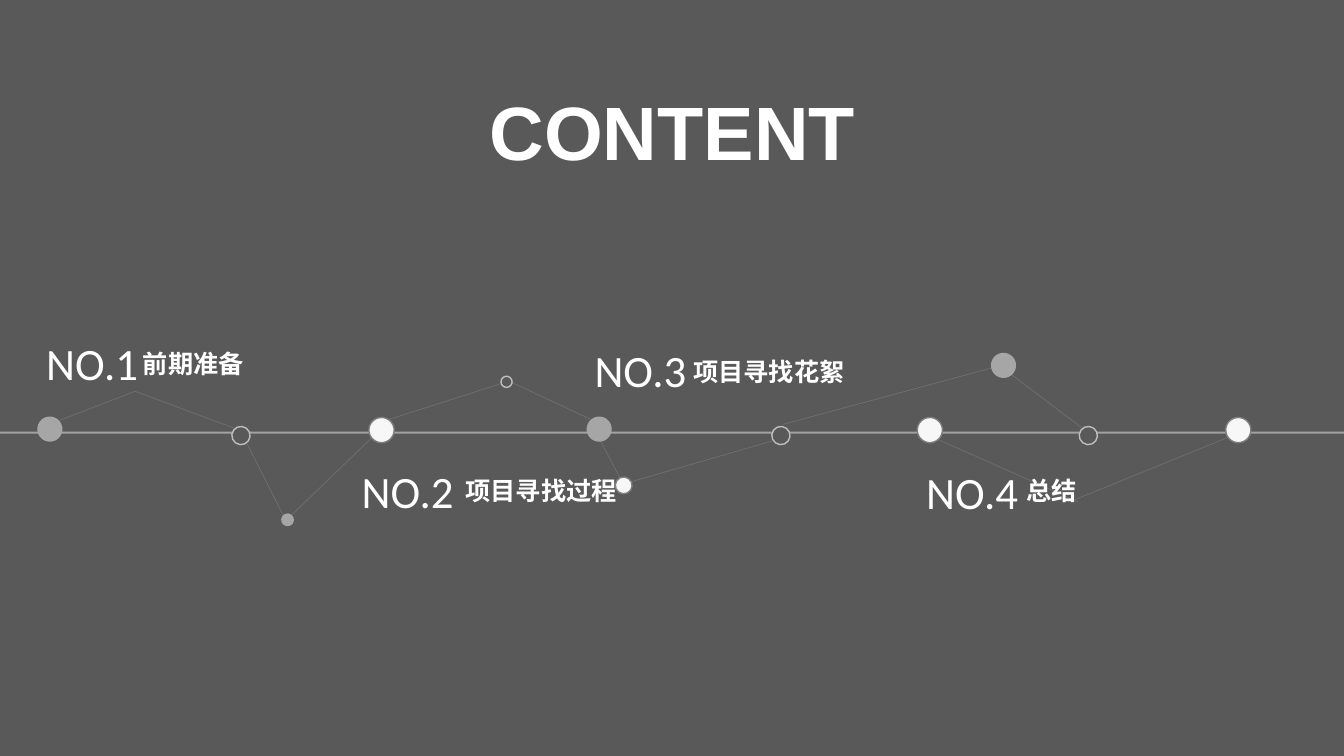
from collections import namedtuple
from dataclasses import dataclass

from lxml import etree
from pptx import Presentation
from pptx.dml.color import RGBColor
from pptx.enum.shapes import MSO_CONNECTOR, MSO_SHAPE
from pptx.enum.text import MSO_ANCHOR, MSO_AUTO_SIZE, PP_ALIGN
from pptx.oxml.ns import qn
from pptx.util import Pt

OVAL = MSO_SHAPE.OVAL
STRAIGHT = MSO_CONNECTOR.STRAIGHT
LEFT, CENTER = PP_ALIGN.LEFT, PP_ALIGN.CENTER
TOP = MSO_ANCHOR.TOP
FIT_SHAPE = MSO_AUTO_SIZE.SHAPE_TO_FIT_TEXT
TITLE_ONLY = 5

Box = namedtuple("Box", "left top width height")


@dataclass(frozen=True)
class Theme:
    """Colours, fonts and type sizes of the deck."""
    back: str = "595959"
    text: str = "FFFFFF"
    thread: str = "BFBFBF"
    heading_font: str = "Arial"
    number_font: str = "Calibri"
    title_size: int = 54
    number_size: int = 32
    name_size: int = 18


THEME = Theme()

NODE_STYLES = {
    "ring": (THEME.back, "BFBFBF"),
    "grey": ("A6A6A6", None),
    "white": ("F7F7F7", "808080"),
}

# x, y offset from the axis, diameter
NODES = [
    ("ring", 172.1, 2.1, 13), ("grey", 35.6, -2.5, 18),
    ("white", 272.5, -1.8, 18), ("ring", 557.8, 2.1, 13),
    ("grey", 428, -2.5, 18), ("white", 664.2, -1.8, 18),
    ("ring", 777.4, 2.1, 13), ("white", 884.5, -1.8, 18),
    ("grey", 205.4, 62.3, 9.2), ("ring", 361.8, -36.3, 8),
    ("white", 445.5, 37.7, 12), ("grey", 716.8, -48, 18),
]

THREADS = [
    (42.5, -8.7, 96.5, -29.5), (96.5, -29.5, 167.8, -3),
    (175.7, 6.4, 202.3, 59), (201.6, 65.4, 265.7, 3.5),
    (273.6, -8, 363.6, -36.8), (421.9, -9.5, 365, -36.1),
    (425.5, -0.8, 445.7, 38), (553, 5.6, 445.7, 36.6),
    (708.5, -46.2, 559.4, -5.9), (773.3, -3, 711.4, -49.8),
    (770.4, 49.6, 670.3, 5), (877, 3.5, 767.5, 48),
]

ITEMS = [
    ("前期准备", (25.9, -72.8), (95, -63.5)),
    ("项目寻找过程", (251.3, 18.6), (325.4, 27.2)),
    ("项目寻找花絮", (417.6, -67.8), (488.2, -57.7)),
    ("总结", (654.5, 19.3), (725.8, 27.2)),
]


def rgb(code):
    """Turn a hex code into a colour."""
    return RGBColor.from_string(code)


def place(shape, box):
    """Move a shape to a box given in points."""
    shape.left, shape.top, shape.width, shape.height = map(Pt, box)


def write(shape, text, size, font, bold=False, align=LEFT, wrap=True):
    """Put one formatted line of text into a shape."""
    tf = shape.text_frame
    tf.word_wrap = wrap
    tf.auto_size = FIT_SHAPE
    tf.vertical_anchor = TOP
    p = tf.paragraphs[0]
    p.alignment = align
    p.line_spacing = 1.0
    r = p.add_run()
    r.text = text
    r.font.size = Pt(size)
    r.font.name = font
    r.font.bold = bold
    r.font.color.rgb = rgb(THEME.text)


def add_label(s, box, text, **fmt):
    """Add a text box with one formatted line."""
    write(s.shapes.add_textbox(*map(Pt, box)), text, **fmt)


def add_line(s, ends, color, width, opacity):
    """Add a translucent straight line."""
    line = s.shapes.add_connector(STRAIGHT, *map(Pt, ends))
    line.line.color.rgb = rgb(color)
    line.line.width = Pt(width)
    fill = line.line.fill._xPr.find(qn("a:solidFill"))
    etree.SubElement(fill[0], qn("a:alpha"), val=str(opacity * 1000))
    etree.SubElement(line._element.spPr, qn("a:effectLst"))


def add_node(s, style, x, y, d):
    """Add a circle centred on a point."""
    fill, outline = NODE_STYLES[style]
    node = s.shapes.add_shape(OVAL, *map(Pt, (x - d / 2, y - d / 2, d, d)))
    node.rotation = 186.2
    node.shadow.inherit = False
    node.fill.solid()
    node.fill.fore_color.rgb = rgb(fill)
    if outline:
        node.line.color.rgb = rgb(outline)
        node.line.width = Pt(1)
    else:
        node.line.fill.background()


def add_title(s, box):
    """Fill the title placeholder."""
    title = s.shapes.title
    place(title, box)
    write(title, "CONTENT", size=THEME.title_size, font=THEME.heading_font,
          bold=True, align=CENTER, wrap=False)


def add_timeline(s, box):
    """Draw the axis, threads and nodes around the middle of the box."""
    axis = box.top + box.height / 2
    add_line(s, (box.left, axis, box.left + box.width, axis),
             THEME.text, 1.5, 43)
    for x1, y1, x2, y2 in THREADS:
        ends = (box.left + x1, axis + y1, box.left + x2, axis + y2)
        add_line(s, ends, THEME.thread, 0.5, 21)
    for style, x, y, d in NODES:
        add_node(s, style, box.left + x, axis + y, d)


def add_items(s, box):
    """Write the numbered chapter names around the middle of the box."""
    axis = box.top + box.height / 2
    for i, (name, (nx, ny), (tx, ty)) in enumerate(ITEMS, 1):
        add_label(s, (box.left + nx, axis + ny, 139, 46), f"NO.{i}",
                  size=THEME.number_size, font=THEME.number_font)
        width = len(name) * THEME.name_size + 14.4
        add_label(s, (box.left + tx, axis + ty, width, 28.8), name,
                  size=THEME.name_size, font=THEME.heading_font,
                  bold=True, wrap=False)


def build_agenda(prs):
    """Add the agenda slide."""
    s = prs.slides.add_slide(prs.slide_layouts[TITLE_ONLY])
    s.background.fill.solid()
    s.background.fill.fore_color.rgb = rgb(THEME.back)
    band = Box(0, 229, 960, 160)
    add_title(s, Box(341.3, 56.9, 277.9, 72.7))
    add_timeline(s, band)
    add_items(s, band)


def main():
    """Build and save the deck."""
    prs = Presentation()
    prs.slide_width, prs.slide_height = Pt(960), Pt(540)
    build_agenda(prs)
    prs.save("out.pptx")


if __name__ == "__main__":
    main()
